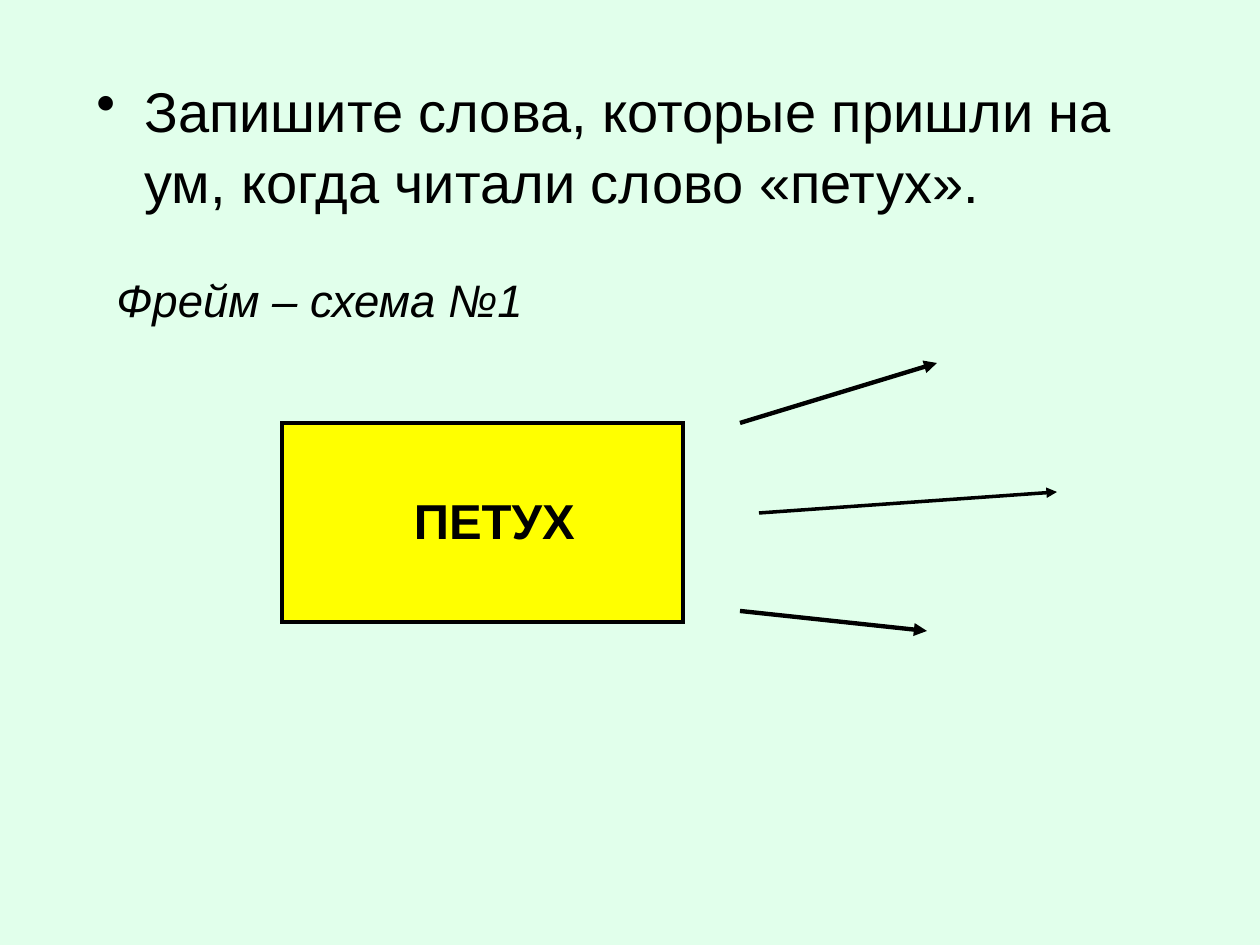
from dataclasses import dataclass

from lxml import etree
from pptx import Presentation
from pptx import util as u
from pptx.dml.color import RGBColor
from pptx.enum import shapes, text
from pptx.oxml.ns import qn

PX = 914400 // 126


@dataclass(frozen=True)
class Theme:
    font: str = "Arial"
    back: str = "E1FFEB"
    ink: str = "000000"
    box: str = "FFFF00"
    task_size: int = 32
    caption_size: int = 26
    word_size: int = 28
    border: float = 2.25


def px(n):
    return u.Emu(n * PX)


def rgb(value):
    return RGBColor.from_string(value)


class Deck:
    def __init__(self, theme, width, height):
        self.theme = theme
        self.prs = Presentation()
        self.prs.slide_width, self.prs.slide_height = px(width), px(height)

    def add_slide(self):
        self.s = self.prs.slides.add_slide(self.prs.slide_layouts[6])
        fill = self.s.background.fill
        fill.solid()
        fill.fore_color.rgb = rgb(self.theme.back)

    def style(self, p, size, bold=False, italic=False):
        f = p.font
        f.name, f.size, f.bold, f.italic = self.theme.font, u.Pt(size), bold, italic
        f.color.rgb = rgb(self.theme.ink)

    def text_box(self, x, y, w, h):
        tf = self.s.shapes.add_textbox(px(x), px(y), px(w), px(h)).text_frame
        tf.word_wrap = True
        return tf

    def paragraph(self, p, words, size, indent, bullet=None, **look):
        p.text = words
        self.style(p, size, **look)
        pPr = p._p.get_or_add_pPr()
        pPr.set("marL", str(px(indent)))
        pPr.set("indent", str(px(-indent if bullet else 0)))
        if bullet:
            mark = etree.Element(qn("a:buChar"), char=bullet)
            pPr.insert_element_before(mark, "a:tabLst", "a:defRPr", "a:extLst")

    def word_table(self, x, y, w, h, word, indent):
        table = self.s.shapes.add_table(1, 1, px(x), px(y), px(w), px(h)).table
        cell = table.cell(0, 0)
        cell.fill.solid()
        cell.fill.fore_color.rgb = rgb(self.theme.box)
        cell.vertical_anchor = text.MSO_ANCHOR.MIDDLE
        cell.margin_left = px(indent)
        p = cell.text_frame.paragraphs[0]
        p.text = word
        self.style(p, self.theme.word_size, bold=True)
        # Borders come before the fill in the cell properties
        tcPr = cell._tc.get_or_add_tcPr()
        for i, side in enumerate(("lnL", "lnR", "lnT", "lnB")):
            ln = etree.Element(qn(f"a:{side}"), w=str(u.Pt(self.theme.border)))
            solid = etree.SubElement(ln, qn("a:solidFill"))
            etree.SubElement(solid, qn("a:srgbClr"), val=self.theme.ink)
            tcPr.insert(i, ln)

    def arrow(self, x1, y1, x2, y2, width):
        sp = self.s.shapes.add_connector(
            shapes.MSO_CONNECTOR.STRAIGHT, px(x1), px(y1), px(x2), px(y2))
        sp.line.color.rgb = rgb(self.theme.ink)
        sp.line.width = u.Pt(width)
        etree.SubElement(sp.line._get_or_add_ln(), qn("a:tailEnd"), type="triangle")
        etree.SubElement(sp._element.spPr, qn("a:effectLst"))


def main():
    theme = Theme()
    deck = Deck(theme, 1260, 945)
    deck.add_slide()

    # Task and caption
    tf = deck.text_box(84, 67, 1134, 607)
    task = tf.paragraphs[0]
    deck.paragraph(task, "Запишите слова, которые пришли на ум, когда читали слово «петух».",
                   theme.task_size, 48, bullet="•")
    task.line_spacing = 1.05
    caption = tf.add_paragraph()
    deck.paragraph(caption, "Фрейм – схема №1", theme.caption_size, 20, italic=True)
    caption.space_before = u.Pt(33)

    # Key word
    deck.word_table(282, 423, 401, 199, "ПЕТУХ", indent=132)

    # Arrows to the associations
    for ends, width in (((740, 423, 937, 363), 2.5),
                        ((759, 513, 1057, 492), 2),
                        ((740, 611, 927, 631), 2.5)):
        deck.arrow(*ends, width)

    deck.prs.save("out.pptx")


if __name__ == "__main__":
    main()
